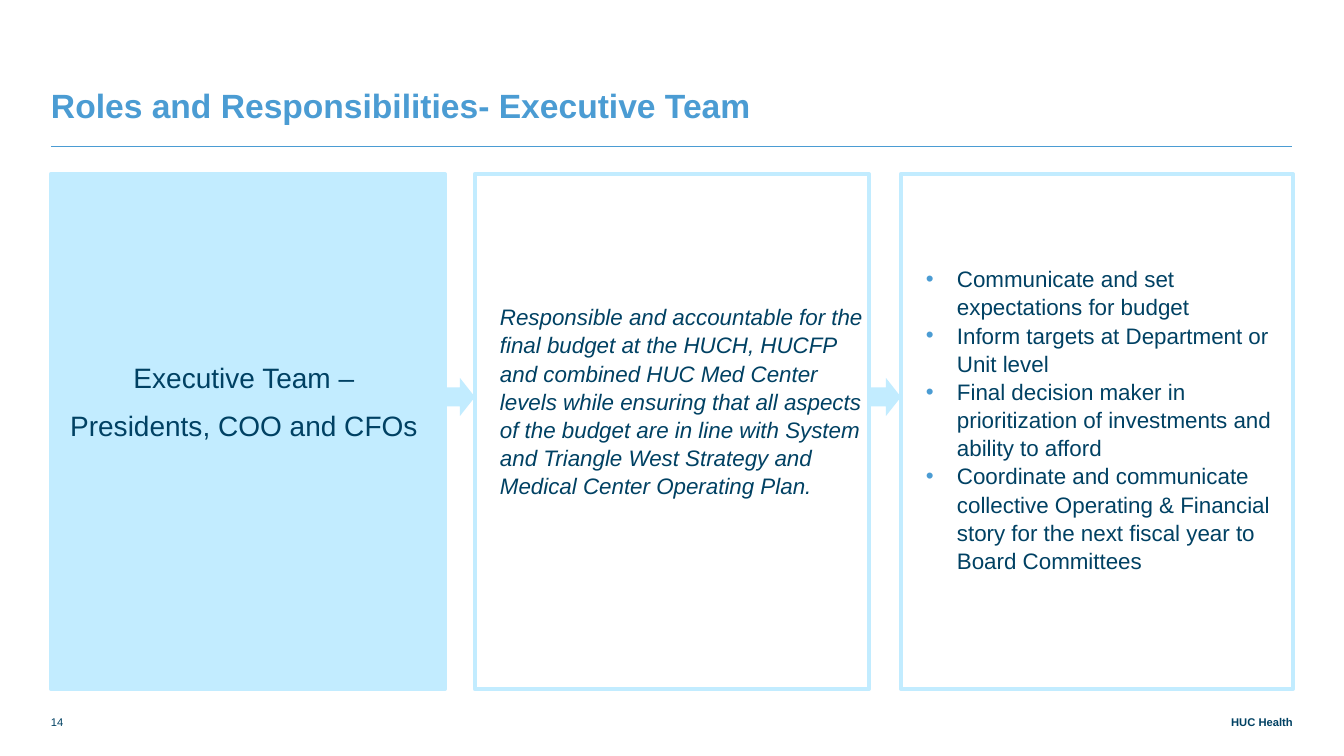
from lxml import etree
from pptx import Presentation
from pptx import util as u
from pptx.dml.color import RGBColor
from pptx.enum import shapes, text
from pptx.oxml.ns import qn

EMU_PER_PX = 914400 / 100.8
FONT = "Arial"
NAVY = RGBColor(0x00, 0x41, 0x63)
BLUE = RGBColor(0x4B, 0x9C, 0xD3)
PALE = RGBColor(0xC2, 0xEC, 0xFF)

PANEL_TOP, PANEL_HEIGHT = 174, 515
ARROW_TOP, ARROW_WIDTH, ARROW_HEIGHT = 378, 30, 38
LINE_SPACING = 1.05

TEAM = ["Executive Team –", "Presidents, COO and CFOs"]
PURPOSE = [
    "Responsible and accountable for the final budget at the HUCH, HUCFP and "
    "combined HUC Med Center levels while ensuring that all aspects of the "
    "budget are in line with System and Triangle West Strategy and Medical "
    "Center Operating Plan.",
]
DUTIES = [
    "Communicate and set expectations for budget",
    "Inform targets at Department or Unit level",
    "Final decision maker in prioritization of investments and ability to afford",
    "Coordinate and communicate collective Operating & Financial story for the "
    "next fiscal year to Board Committees",
]


def px(value):
    return u.Emu(round(value * EMU_PER_PX))


def set_margins(frame, left=0, top=0, right=0, bottom=0):
    frame.margin_left, frame.margin_top = px(left), px(top)
    frame.margin_right, frame.margin_bottom = px(right), px(bottom)
    frame.word_wrap = True


def style(paragraph, size, color=NAVY, bold=False, italic=False):
    font = paragraph.font
    font.name, font.size = FONT, u.Pt(size)
    font.bold, font.italic = bold, italic
    font.color.rgb = color


def add_label(slide, box, content, size, color=NAVY, bold=False,
              align=text.PP_ALIGN.LEFT):
    """Bottom-anchored single line of text."""
    frame = slide.shapes.add_textbox(*map(px, box)).text_frame
    set_margins(frame)
    frame.vertical_anchor = text.MSO_ANCHOR.BOTTOM
    paragraph = frame.paragraphs[0]
    paragraph.text = content
    paragraph.alignment = align
    style(paragraph, size, color, bold)
    return paragraph


def add_rule(slide, left, right, y):
    rule = slide.shapes.add_connector(
        shapes.MSO_CONNECTOR.STRAIGHT, px(left), px(y), px(right), px(y))
    rule.line.color.rgb = BLUE
    rule.line.width = u.Pt(0.5)
    etree.SubElement(rule._element.spPr, qn("a:effectLst"))


def add_panel(slide, left, width, filled=False):
    panel = slide.shapes.add_shape(
        shapes.MSO_SHAPE.RECTANGLE,
        px(left), px(PANEL_TOP), px(width), px(PANEL_HEIGHT))
    panel.shadow.inherit = False
    if filled:
        panel.fill.solid()
        panel.fill.fore_color.rgb = PALE
    else:
        panel.fill.background()
    panel.line.color.rgb = PALE
    panel.line.width = u.Pt(3)
    panel.text_frame.vertical_anchor = text.MSO_ANCHOR.TOP
    return panel.text_frame


def add_bullet(paragraph, indent, hanging):
    properties = paragraph._p.get_or_add_pPr()
    properties.set("marL", str(px(indent)))
    properties.set("indent", str(-px(hanging)))
    color = etree.SubElement(properties, qn("a:buClr"))
    etree.SubElement(color, qn("a:srgbClr")).set("val", str(BLUE))
    etree.SubElement(properties, qn("a:buFont")).set("typeface", FONT)
    etree.SubElement(properties, qn("a:buChar")).set("char", "•")


def write(frame, lines, size, align=text.PP_ALIGN.LEFT, italic=False,
          space_after=0, bullets=False):
    for index, line in enumerate(lines):
        paragraph = frame.add_paragraph() if index else frame.paragraphs[0]
        paragraph.text = line
        if bullets:
            add_bullet(paragraph, 56, 31)
        paragraph.alignment = align
        paragraph.line_spacing = LINE_SPACING
        paragraph.space_after = u.Pt(space_after)
        style(paragraph, size, italic=italic)


def add_arrow(slide, left):
    arrow = slide.shapes.add_shape(
        shapes.MSO_SHAPE.RIGHT_ARROW,
        px(left), px(ARROW_TOP), px(ARROW_WIDTH), px(ARROW_HEIGHT))
    arrow.shadow.inherit = False
    arrow.fill.solid()
    arrow.fill.fore_color.rgb = PALE
    arrow.line.fill.background()


def main():
    presentation = Presentation()
    presentation.slide_width, presentation.slide_height = px(1344), px(756)
    slide = presentation.slides.add_slide(presentation.slide_layouts[6])

    # Heading
    title = add_label(slide, (51, 38, 1241, 87),
                      "Roles and Responsibilities- Executive Team",
                      24, BLUE, bold=True)
    title.line_spacing = u.Pt(28)
    add_rule(slide, 51, 1292, 146)

    # Team, purpose and duties
    team = add_panel(slide, 51, 394, filled=True)
    set_margins(team, top=185, right=8)
    write(team, TEAM, 20, text.PP_ALIGN.CENTER, space_after=9)

    purpose = add_panel(slide, 475, 394)
    set_margins(purpose, left=25, top=128)
    write(purpose, PURPOSE, 16, italic=True)

    duties = add_panel(slide, 901, 392)
    set_margins(duties, top=90)
    write(duties, DUTIES, 16, bullets=True)

    # Arrows between the panels
    for left in (445, 871):
        add_arrow(slide, left)

    # Footer
    add_label(slide, (51, 706, 46, 23), "14", 8)
    add_label(slide, (1128, 706, 165, 23), "HUC Health", 8, bold=True,
              align=text.PP_ALIGN.RIGHT)

    presentation.save("out.pptx")


if __name__ == "__main__":
    main()
